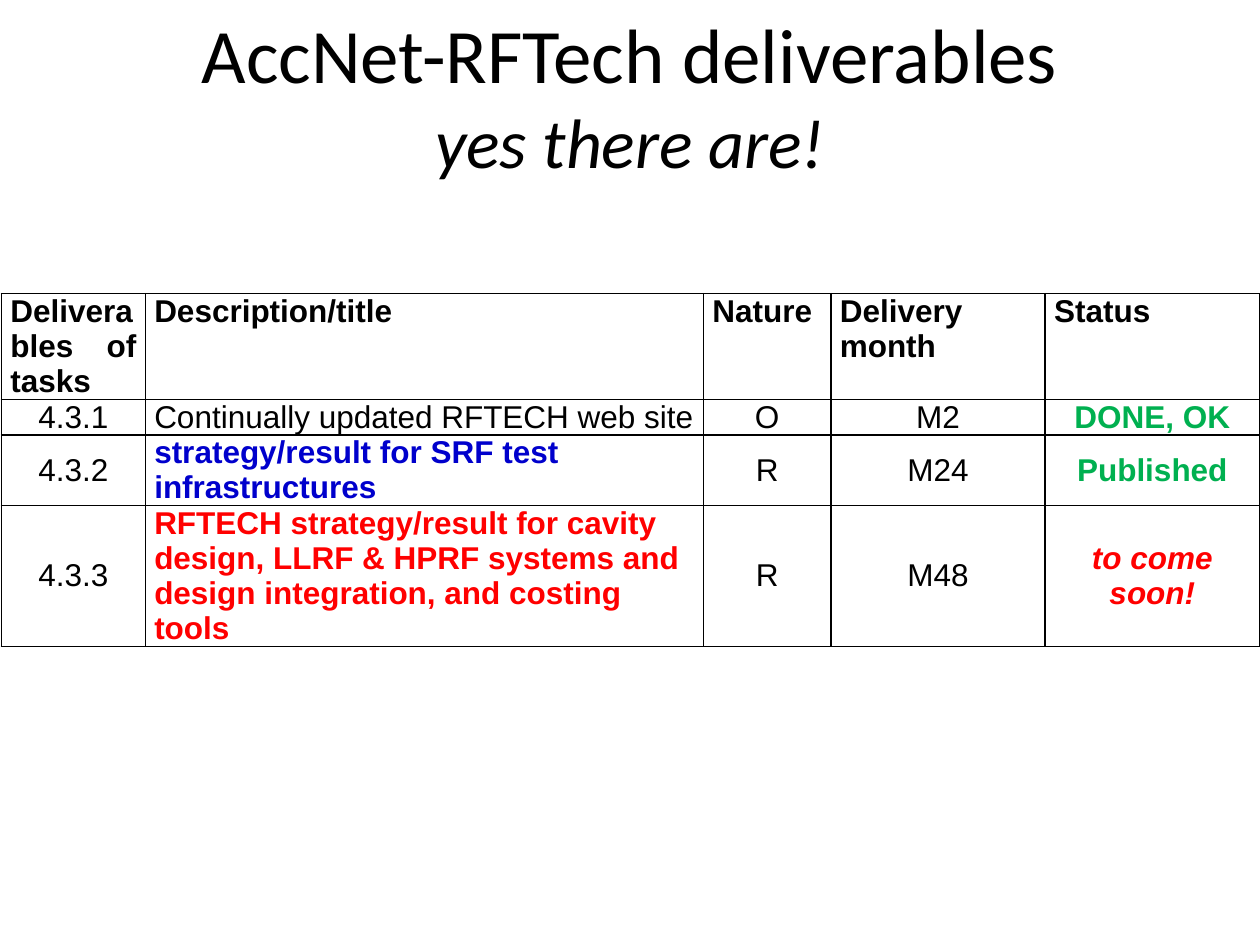
from lxml.etree import SubElement
from pptx import Presentation
from pptx.dml.color import RGBColor
from pptx.enum.text import MSO_ANCHOR, MSO_AUTO_SIZE, PP_ALIGN
from pptx.oxml.ns import qn
from pptx.util import Cm, Pt

BLACK, GREEN, BLUE, RED = "000000", "00B050", "0000CC", "FF0000"
TITLE = [
    ("AccNet-RFTech deliverables", {"size": Pt(44)}),
    ("yes there are!", {"size": Pt(40), "italic": True}),
]
HEADERS = ["Deliverables of tasks", "Description/title", "Nature",
           "Delivery month", "Status"]
DELIVERABLES = [
    ("4.3.1", "Continually updated RFTECH web site", "O", "M2", "DONE, OK"),
    ("4.3.2", "strategy/result for SRF test infrastructures", "R", "M24",
     "Published"),
    ("4.3.3", "RFTECH strategy/result for cavity design, LLRF & HPRF systems "
     "and design integration, and costing tools", "R", "M48", "to come soon!"),
]
HEADER_STYLE = {"bold": True}
CELL_STYLES = {
    (1, 4): {"bold": True, "color": GREEN},
    (2, 1): {"bold": True, "color": BLUE},
    (2, 4): {"bold": True, "color": GREEN},
    (3, 1): {"bold": True, "color": RED},
    (3, 4): {"bold": True, "italic": True, "color": RED},
}
COL_WIDTHS = [2.9, 11.25, 2.57, 4.32, 4.32]
ROW_LINES = [3, 1, 2, 4]
LINE_HEIGHT = 0.71


def rgb(value):
    return RGBColor.from_string(value)


def add_text(p, text, style):
    r = p.add_run()
    r.text = text
    for name, value in style.items():
        if name == "color":
            r.font.color.rgb = rgb(value)
        else:
            setattr(r.font, name, value)


def add_borders(cell):
    tcPr = cell._tc.get_or_add_tcPr()
    for i, side in enumerate(("lnL", "lnR", "lnT", "lnB")):
        ln = SubElement(tcPr, qn(f"a:{side}"), w=str(Pt(1)))
        tcPr.remove(ln)
        tcPr.insert(i, ln)
        fill = SubElement(ln, qn("a:solidFill"))
        SubElement(fill, qn("a:srgbClr"), val=BLACK)


def fill_cell(cell, text, row, col):
    cell.margin_left = cell.margin_right = Cm(0.18)
    cell.margin_top = cell.margin_bottom = 0
    cell.fill.background()
    p = cell.text_frame.paragraphs[0]
    if row == 0:
        cell.vertical_anchor = MSO_ANCHOR.TOP
        p.alignment = PP_ALIGN.JUSTIFY
    else:
        cell.vertical_anchor = MSO_ANCHOR.MIDDLE
        p.alignment = PP_ALIGN.LEFT if col == 1 else PP_ALIGN.CENTER
    style = {"size": Pt(18), "name": "Arial", "bold": False, "color": BLACK}
    style.update(HEADER_STYLE if row == 0 else CELL_STYLES.get((row, col), {}))
    add_text(p, text, style)
    add_borders(cell)


def add_deliverables(s):
    rows = [HEADERS, *DELIVERABLES]
    heights = [n * LINE_HEIGHT for n in ROW_LINES]
    table = s.shapes.add_table(
        len(rows), len(HEADERS), Cm(0.03), Cm(5.92),
        Cm(sum(COL_WIDTHS)), Cm(sum(heights))).table
    table.first_row = table.horz_banding = False
    for column, width in zip(table.columns, COL_WIDTHS):
        column.width = Cm(width)
    for i, (values, height) in enumerate(zip(rows, heights)):
        table.rows[i].height = Cm(height)
        for j, text in enumerate(values):
            fill_cell(table.cell(i, j), text, i, j)


def add_title(s):
    sp = s.shapes.title
    sp.left, sp.top, sp.width, sp.height = Cm(1.27), 0, Cm(22.86), Cm(3.18)
    tf = sp.text_frame
    tf.word_wrap = True
    tf.auto_size = MSO_AUTO_SIZE.NONE
    tf.vertical_anchor = MSO_ANCHOR.TOP
    for i, (text, style) in enumerate(TITLE):
        p = tf.add_paragraph() if i else tf.paragraphs[0]
        p.alignment = PP_ALIGN.CENTER
        add_text(p, text, {"name": "Calibri", "color": BLACK, **style})


def main():
    prs = Presentation()
    prs.slide_width, prs.slide_height = Cm(25.4), Cm(19.05)
    s = prs.slides.add_slide(prs.slide_layouts[5])
    add_deliverables(s)
    add_title(s)
    prs.save("out.pptx")


if __name__ == "__main__":
    main()
